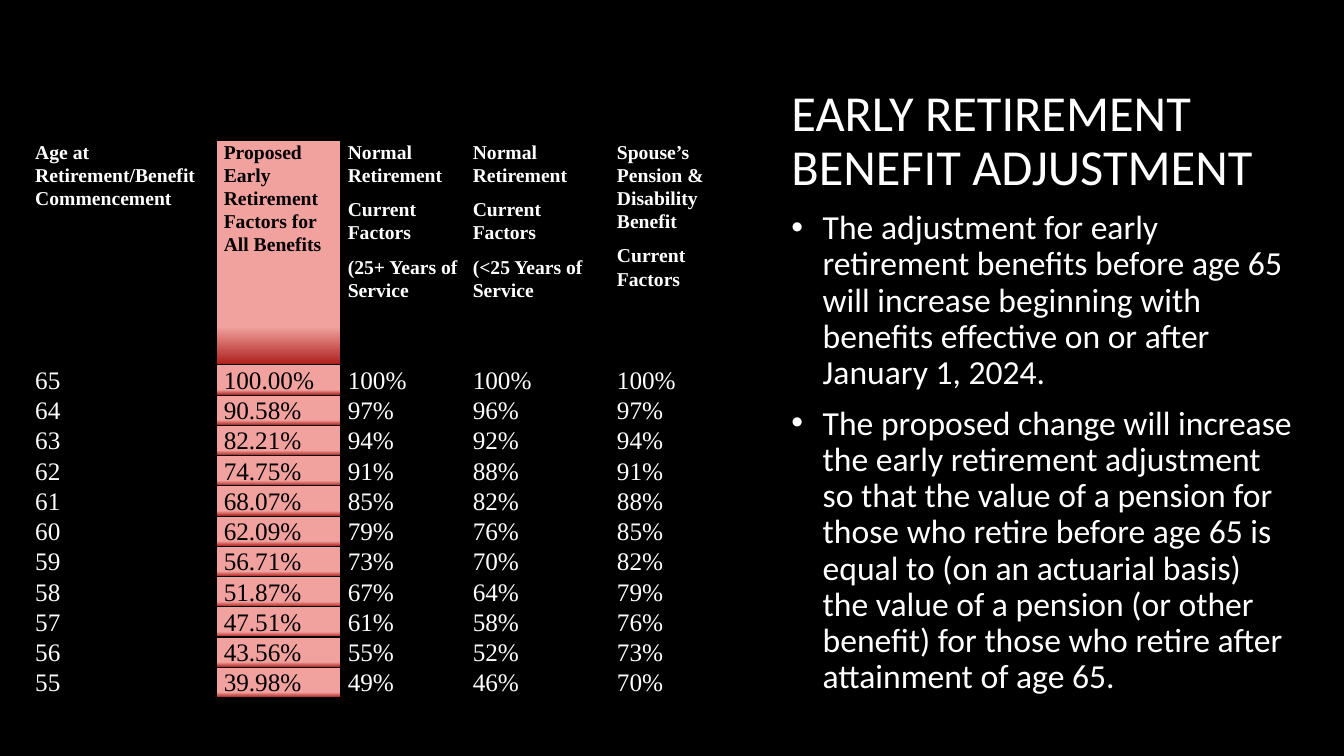
from lxml import etree
from pptx import Presentation
from pptx.dml.color import RGBColor
from pptx.enum.text import MSO_ANCHOR, MSO_AUTO_SIZE, PP_ALIGN
from pptx.oxml.ns import qn
from pptx.util import Inches, Pt

TOP = MSO_ANCHOR.TOP
NO_AUTOFIT = MSO_AUTO_SIZE.NONE
LEFT = PP_ALIGN.LEFT

BLACK, WHITE = "000000", "FFFFFF"
GRADIENT = [(74, "F1A19E"), (83, "F1A19E"), (100, "AC1E1A"), (100, "F5C0BE")]
TABLE_FONT, BODY_FONT = "Times New Roman", "Calibri"

COLUMN_WIDTHS = [1.87, 1.23, 1.24, 1.43, 1.42]
HEADER_HEIGHT, ROW_HEIGHT = 2.23, 0.3
PROPOSED_COLUMN = 1
OLDEST_AGE = 65

HEADERS = [
    ["Age at Retirement/Benefit Commencement"],
    ["Proposed Early Retirement Factors for All Benefits"],
    ["Normal Retirement", "Current Factors", "(25+ Years of Service"],
    ["Normal Retirement", "Current Factors", "(<25 Years of Service"],
    ["Spouse’s Pension & Disability Benefit", "Current Factors"],
]
FACTORS = [
    ("100.00%", 100, 100, 100),
    ("90.58%", 97, 96, 97),
    ("82.21%", 94, 92, 94),
    ("74.75%", 91, 88, 91),
    ("68.07%", 85, 82, 88),
    ("62.09%", 79, 76, 85),
    ("56.71%", 73, 70, 82),
    ("51.87%", 67, 64, 79),
    ("47.51%", 61, 58, 76),
    ("43.56%", 55, 52, 73),
    ("39.98%", 49, 46, 70),
]
HEADING = "EARLY RETIREMENT BENEFIT ADJUSTMENT"
BULLETS = [
    "The adjustment for early retirement benefits before age 65 will increase "
    "beginning with benefits effective on or after January 1, 2024.",
    "The proposed change will increase the early retirement adjustment so that "
    "the value of a pension for those who retire before age 65 is equal to "
    "(on an actuarial basis) the value of a pension (or other benefit) for "
    "those who retire after attainment of age 65.",
]


def colour(hex_code):
    return RGBColor.from_string(hex_code)


def add_span(para, text, font, size, hex_code, bold=False):
    span = para.add_run()
    span.text = text
    span.font.name = font
    span.font.size = Pt(size)
    span.font.bold = bold
    span.font.color.rgb = colour(hex_code)


def next_para(frame, index):
    return frame.add_paragraph() if index else frame.paragraphs[0]


def add_colour_element(parent, hex_code):
    etree.SubElement(parent, qn("a:srgbClr"), val=hex_code)


def set_borders(cell, hex_code, width):
    properties = cell._tc.get_or_add_tcPr()
    for side in ("L", "R", "T", "B"):
        line = etree.SubElement(properties, qn(f"a:ln{side}"), w=str(Pt(width)))
        add_colour_element(etree.SubElement(line, qn("a:solidFill")), hex_code)


def set_gradient(cell):
    properties = cell._tc.get_or_add_tcPr()
    gradient = etree.SubElement(properties, qn("a:gradFill"), rotWithShape="1")
    stops = etree.SubElement(gradient, qn("a:gsLst"))
    for share, hex_code in GRADIENT:
        stop = etree.SubElement(stops, qn("a:gs"), pos=str(share * 1000))
        add_colour_element(stop, hex_code)
    etree.SubElement(gradient, qn("a:lin"), ang="5400000", scaled="0")


def fill_cell(cell, texts, size, bold, proposed):
    cell.margin_left = cell.margin_right = Inches(0.07)
    cell.margin_top = cell.margin_bottom = 0
    cell.vertical_anchor = TOP
    set_borders(cell, BLACK, 1)
    if proposed:
        set_gradient(cell)
    else:
        cell.fill.background()
    for index, text in enumerate(texts):
        para = next_para(cell.text_frame, index)
        para.line_spacing = 1.07
        para.space_after = Pt(8)
        add_span(para, text, TABLE_FONT, size, BLACK if proposed else WHITE, bold)


def add_factor_table(page):
    rows = [HEADERS]
    for offset, (proposed, *current) in enumerate(FACTORS):
        values = [str(OLDEST_AGE - offset), proposed] + [f"{value}%" for value in current]
        rows.append([[value] for value in values])
    height = HEADER_HEIGHT + ROW_HEIGHT * len(FACTORS)
    table = page.shapes.add_table(
        len(rows), len(COLUMN_WIDTHS), Inches(0.28), Inches(1.39),
        Inches(sum(COLUMN_WIDTHS)), Inches(height)).table
    table.first_row = table.horz_banding = False
    for column, width in zip(table.columns, COLUMN_WIDTHS):
        column.width = Inches(width)
    for row_index, row in enumerate(rows):
        header = row_index == 0
        table.rows[row_index].height = Inches(HEADER_HEIGHT if header else ROW_HEIGHT)
        for column_index, texts in enumerate(row):
            fill_cell(table.cell(row_index, column_index), texts,
                      14 if header else 18, header, column_index == PROPOSED_COLUMN)


def set_bullet(para, bulleted):
    properties = para._p.get_or_add_pPr()
    indent = Inches(0.31) if bulleted else 0
    properties.set("marL", str(indent))
    properties.set("indent", str(-indent))
    if bulleted:
        etree.SubElement(properties, qn("a:buFont"), typeface="Arial")
        etree.SubElement(properties, qn("a:buChar"), char="•")
    else:
        etree.SubElement(properties, qn("a:buNone"))


def write_body(box):
    box.left, box.top = Inches(7.75), Inches(0.82)
    box.width, box.height = Inches(5.18), Inches(6.35)
    frame = box.text_frame
    frame.word_wrap = True
    frame.auto_size = NO_AUTOFIT
    frame.vertical_anchor = TOP
    for index, text in enumerate([HEADING] + BULLETS):
        para = next_para(frame, index)
        set_bullet(para, index > 0)
        para.alignment = LEFT
        para.line_spacing = 0.9
        para.space_before = Pt(10 if index else 0)
        add_span(para, text, BODY_FONT, 24 if index else 36, WHITE)


def main():
    deck = Presentation()
    deck.slide_width, deck.slide_height = Inches(13.33), Inches(7.5)
    page = deck.slides.add_slide(deck.slide_layouts.get_by_name("Title and Content"))
    page.background.fill.solid()
    page.background.fill.fore_color.rgb = colour(BLACK)
    title = page.shapes.title.element
    title.getparent().remove(title)
    add_factor_table(page)
    write_body(page.placeholders[1])
    deck.save("out.pptx")


if __name__ == "__main__":
    main()
